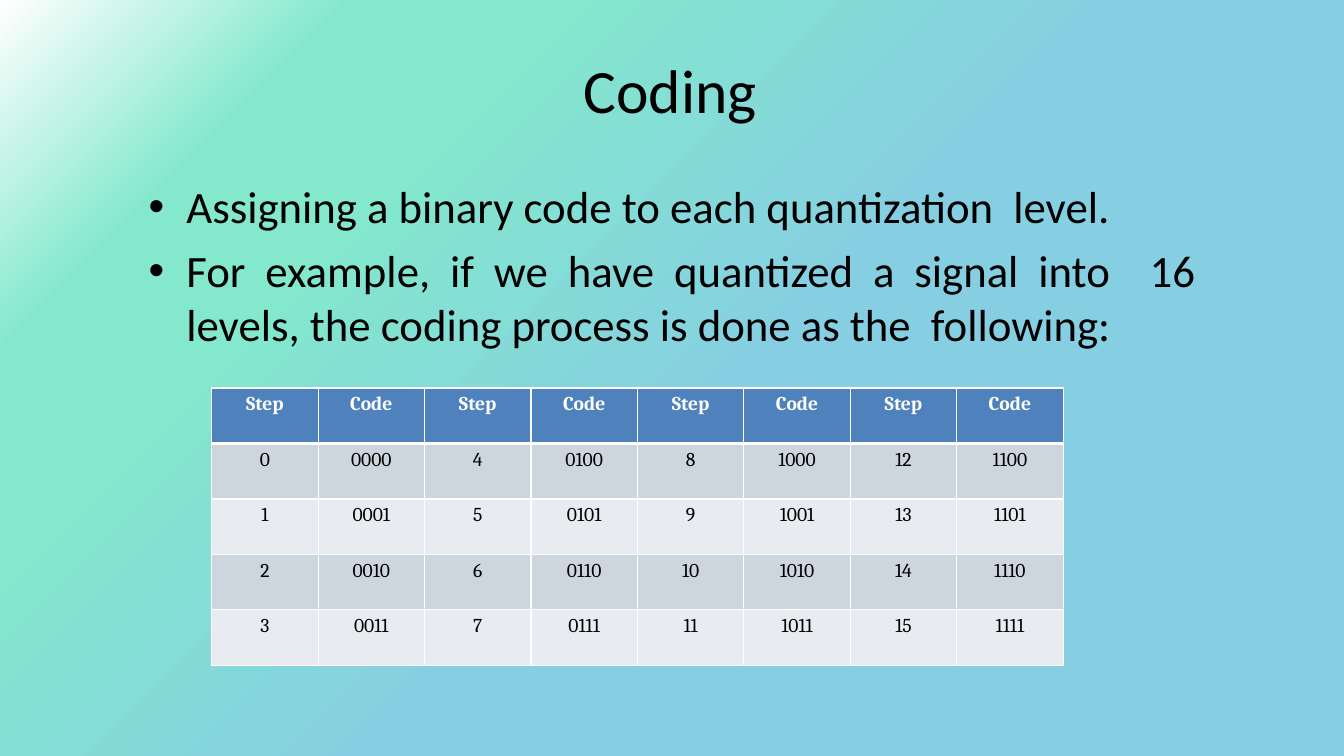
import lxml.etree
import pptx
import pptx.dml.color
import pptx.enum.text
import pptx.oxml.ns
import pptx.util

Pt = pptx.util.Pt
Align = pptx.enum.text.PP_ALIGN
Anchor = pptx.enum.text.MSO_ANCHOR
qn = pptx.oxml.ns.qn

TITLE = "Coding"
BULLETS = [
    ("Assigning a binary code to each quantization  level.", 1.1),
    ("For example, if we have quantized a signal into  16 levels, "
     "the coding process is done as the  following:", 7.7),
]
HEADINGS = ("Step", "Code")
GROUPS = 4
STEPS_PER_GROUP = 4
HEADER_FILL = "4F81BC"
BAND_FILLS = ("CDD6DF", "E8EBEF")
BLACK, WHITE = "000000", "FFFFFF"
BACKGROUND_STOPS = [
    (17, "86CFE2"), (46, "86CFE2"), (74, "83E8CC"),
    (83, "83E8CC"), (100, "FFFFFF"), (100, "AFDFEB"),
]
TITLE_BOX = (416.9, 36, 126, 54.7)
BODY_BOX = (105.1, 126.7, 749.5, 125.3)
TABLE_LEFT, TABLE_TOP = 151.2, 277.2
COLUMN_WIDTH, ROW_HEIGHT = 76.05, 39.6


def colour(value):
    return pptx.dml.color.RGBColor.from_string(value)


def child(parent, tag, **attributes):
    return lxml.etree.SubElement(parent, qn(tag), attributes)


def set_background(page):
    page.background.fill.gradient()
    gradient = next(page.element.iter(qn("a:gradFill")))
    for old in list(gradient):
        gradient.remove(old)
    stops = child(gradient, "a:gsLst")
    for position, value in BACKGROUND_STOPS:
        stop = child(stops, "a:gs", pos=str(position * 1000))
        child(stop, "a:srgbClr", val=value)
    circle = child(gradient, "a:path", path="circle")
    child(circle, "a:fillToRect", l="100000", t="100000")
    child(gradient, "a:tileRect", r="-100000", b="-100000")


def add_text(page, place, anchor):
    frame = page.shapes.add_textbox(*map(Pt, place)).text_frame
    frame.word_wrap = True
    frame.vertical_anchor = anchor
    frame.margin_left = frame.margin_right = frame.margin_bottom = 0
    frame.margin_top = Pt(0.9)
    return frame


def style(para, text, name, size, value, align, before, bold=False):
    para.text = text
    para.alignment = align
    para.space_before = Pt(before)
    para.font.name = name
    para.font.size = Pt(size)
    para.font.bold = bold
    para.font.color.rgb = colour(value)


def add_bullet(para):
    properties = para._p.get_or_add_pPr()
    properties.set("marL", str(Pt(28)))
    properties.set("indent", str(Pt(-27)))
    child(properties, "a:buFont", typeface="Arial")
    child(properties, "a:buChar", char="•")


def set_borders(cell, top, bottom):
    properties = cell._tc.get_or_add_tcPr()
    for side, width in (("L", 1), ("R", 1), ("T", top), ("B", bottom)):
        line = child(properties, "a:ln" + side, w=str(Pt(width)))
        child(child(line, "a:solidFill"), "a:srgbClr", val=WHITE)


def add_code_table(page):
    rows, columns = STEPS_PER_GROUP + 1, GROUPS * len(HEADINGS)
    table = page.shapes.add_table(
        rows, columns, Pt(TABLE_LEFT), Pt(TABLE_TOP),
        Pt(COLUMN_WIDTH * columns), Pt(ROW_HEIGHT * rows)).table
    table.first_row = table.horz_banding = False
    for column in table.columns:
        column.width = Pt(COLUMN_WIDTH)
    for row in table.rows:
        row.height = Pt(ROW_HEIGHT)

    for row in range(rows):
        header = row == 0
        for column in range(columns):
            group, part = divmod(column, len(HEADINGS))
            step = group * STEPS_PER_GROUP + row - 1
            text = HEADINGS[part] if header else (str(step), f"{step:04b}")[part]
            cell = table.cell(row, column)
            set_borders(cell, 3 if row == 1 else 1, 3 if header else 1)
            cell.fill.solid()
            cell.fill.fore_color.rgb = colour(
                HEADER_FILL if header else BAND_FILLS[(row - 1) % 2])
            cell.margin_left = cell.margin_right = cell.margin_bottom = 0
            cell.margin_top = Pt(3.6)
            cell.vertical_anchor = Anchor.TOP
            style(cell.text_frame.paragraphs[0], text, "Cambria", 14,
                  WHITE if header else BLACK, Align.CENTER, 3.2, header)


def main():
    deck = pptx.Presentation()
    deck.slide_width, deck.slide_height = Pt(960), Pt(540)
    page = deck.slides.add_slide(deck.slide_layouts[6])
    set_background(page)

    title = add_text(page, TITLE_BOX, Anchor.MIDDLE)
    style(title.paragraphs[0], TITLE, "Calibri", 44, BLACK, Align.LEFT, 1.1)

    body = add_text(page, BODY_BOX, Anchor.TOP)
    for index, (text, before) in enumerate(BULLETS):
        para = body.add_paragraph() if index else body.paragraphs[0]
        add_bullet(para)
        style(para, text, "Calibri", 32, BLACK, Align.JUSTIFY, before)

    add_code_table(page)
    deck.save("out.pptx")


if __name__ == "__main__":
    main()
